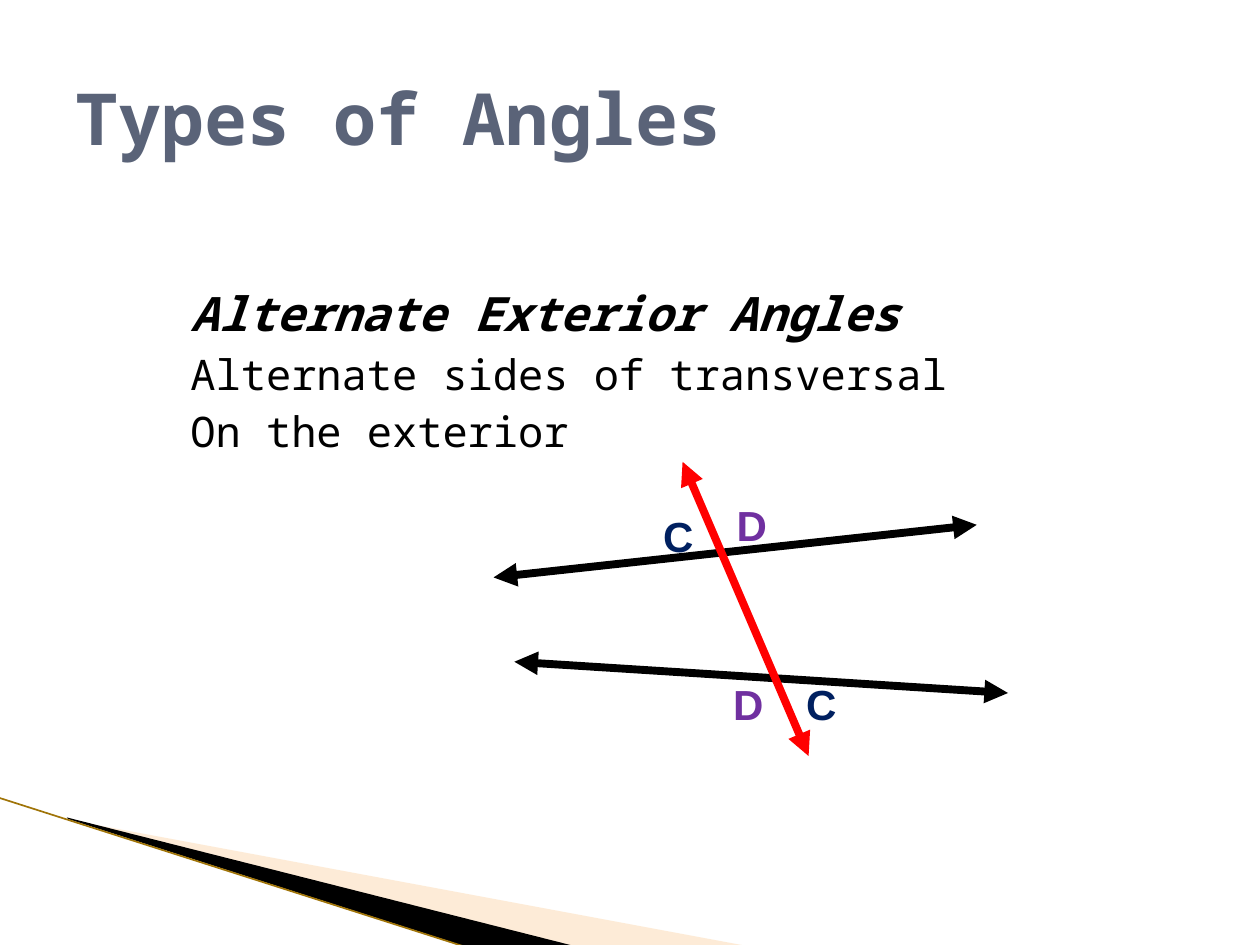
from lxml import etree
from pptx import Presentation
from pptx.dml.color import RGBColor
from pptx.enum.shapes import MSO_CONNECTOR
from pptx.enum.text import MSO_ANCHOR, MSO_AUTO_SIZE, PP_ALIGN
from pptx.oxml.ns import qn
from pptx.util import Cm, Pt

STRAIGHT = MSO_CONNECTOR.STRAIGHT
MIDDLE = MSO_ANCHOR.MIDDLE
FIT_SHAPE = MSO_AUTO_SIZE.SHAPE_TO_FIT_TEXT
LEFT = PP_ALIGN.LEFT
TITLE_ONLY = 5

BLACK = RGBColor(0x00, 0x00, 0x00)
RED = RGBColor(0xFF, 0x00, 0x00)
SLATE = RGBColor(0x5A, 0x63, 0x78)
NAVY = RGBColor(0x00, 0x20, 0x60)
PURPLE = RGBColor(0x70, 0x30, 0xA0)
PEACH = RGBColor(0xFC, 0xCF, 0x9B)
GOLD = RGBColor(0xA0, 0x74, 0x08)

TEXT_FONT = "Noto Sans Mono"
LABEL_FONT = "Arial"


class SlideBuilder:
    """Draws on one slide; all lengths are in centimetres."""

    def __init__(self, slide):
        self.slide = slide

    def style(self, paragraph, font_name, size, color, bold=False, italic=False):
        for run in paragraph.runs:
            font = run.font
            font.name, font.size = font_name, Pt(size)
            font.bold, font.italic = bold, italic
            font.color.rgb = color

    def title(self, text, left, top, width, height):
        shape = self.slide.shapes.title
        shape.left, shape.top = Cm(left), Cm(top)
        shape.width, shape.height = Cm(width), Cm(height)
        frame = shape.text_frame
        frame.text = text
        frame.vertical_anchor = MIDDLE
        frame.paragraphs[0].alignment = LEFT
        self.style(frame.paragraphs[0], TEXT_FONT, 41, SLATE, bold=True)

    def definition(self, term, conditions, left, top, width, height):
        """A bold italic term with its conditions listed below."""
        box = self.slide.shapes.add_textbox(Cm(left), Cm(top), Cm(width), Cm(height))
        frame = box.text_frame
        frame.word_wrap = True
        frame.text = "\n".join([term, *conditions])
        for index, paragraph in enumerate(frame.paragraphs):
            properties = paragraph._p.get_or_add_pPr()
            properties.set("marL", str(Cm(1.02)))
            properties.set("indent", str(Cm(-0.71)))
            is_term = index == 0
            if not is_term:
                paragraph.space_before = Pt(4)
            self.style(paragraph, TEXT_FONT, 27 if is_term else 24, BLACK,
                       bold=is_term, italic=is_term)

    def label(self, text, left, top, color):
        box = self.slide.shapes.add_textbox(Cm(left), Cm(top), Cm(1.14), Cm(1.27))
        frame = box.text_frame
        frame.word_wrap = False
        frame.auto_size = FIT_SHAPE
        frame.text = text
        self.style(frame.paragraphs[0], LABEL_FONT, 24, color, bold=True)

    def line(self, start, end, color, width, arrows=False):
        connector = self.slide.shapes.add_connector(
            STRAIGHT, *(Cm(value) for value in (*start, *end)))
        connector.line.color.rgb = color
        connector.line.width = Pt(width)
        if arrows:
            outline = connector.line._get_or_add_ln()
            for tag in ("a:headEnd", "a:tailEnd"):
                etree.SubElement(outline, qn(tag), type="triangle")
        etree.SubElement(connector._element.spPr, qn("a:effectLst"))

    def wedge(self, points, color, opacity=100):
        start, *others = [(Cm(x), Cm(y)) for x, y in points]
        builder = self.slide.shapes.build_freeform(*start)
        builder.add_line_segments(others, close=True)
        shape = builder.convert_to_shape()
        shape.shadow.inherit = False
        shape.fill.solid()
        shape.fill.fore_color.rgb = color
        shape.line.fill.background()
        if opacity < 100:
            color_element = shape._element.spPr.find(
                f"{qn('a:solidFill')}/{qn('a:srgbClr')}")
            etree.SubElement(color_element, qn("a:alpha"), val=str(opacity * 1000))


def main():
    presentation = Presentation()
    presentation.slide_width, presentation.slide_height = Cm(25.4), Cm(19.05)
    slide = presentation.slides.add_slide(presentation.slide_layouts[TITLE_ONLY])
    builder = SlideBuilder(slide)

    builder.wedge([(1.4, 16.53), (15.11, 19.08), (11.58, 19.08), (1.4, 16.51)],
                  PEACH, opacity=40)
    builder.wedge([(1.35, 16.48), (11.61, 19.08), (9.45, 19.1), (1.37, 16.51)], BLACK)
    builder.line((-0.03, 16.08), (9.42, 19.1), GOLD, 0.95)

    builder.title("Types of Angles", 1.27, 0.76, 22.86, 3.18)
    builder.definition("Alternate Exterior Angles",
                       ["Alternate sides of transversal", "On the exterior"],
                       3.28, 5.61, 21.59, 5.18)

    upper_line = ((9.95, 11.64), (19.69, 10.58))
    lower_line = ((10.37, 13.34), (20.32, 13.97))
    transversal = ((13.76, 9.31), (16.3, 15.24))
    for ends, color in ((upper_line, BLACK), (lower_line, BLACK), (transversal, RED)):
        builder.line(*ends, color, 4.5, arrows=True)

    for text, left, top, color in (
        ("C", 13.12, 10.16, NAVY),
        ("C", 16.0, 13.55, NAVY),
        ("D", 14.53, 13.55, PURPLE),
        ("D", 14.6, 9.95, PURPLE),
    ):
        builder.label(text, left, top, color)

    presentation.save("out.pptx")


if __name__ == "__main__":
    main()
